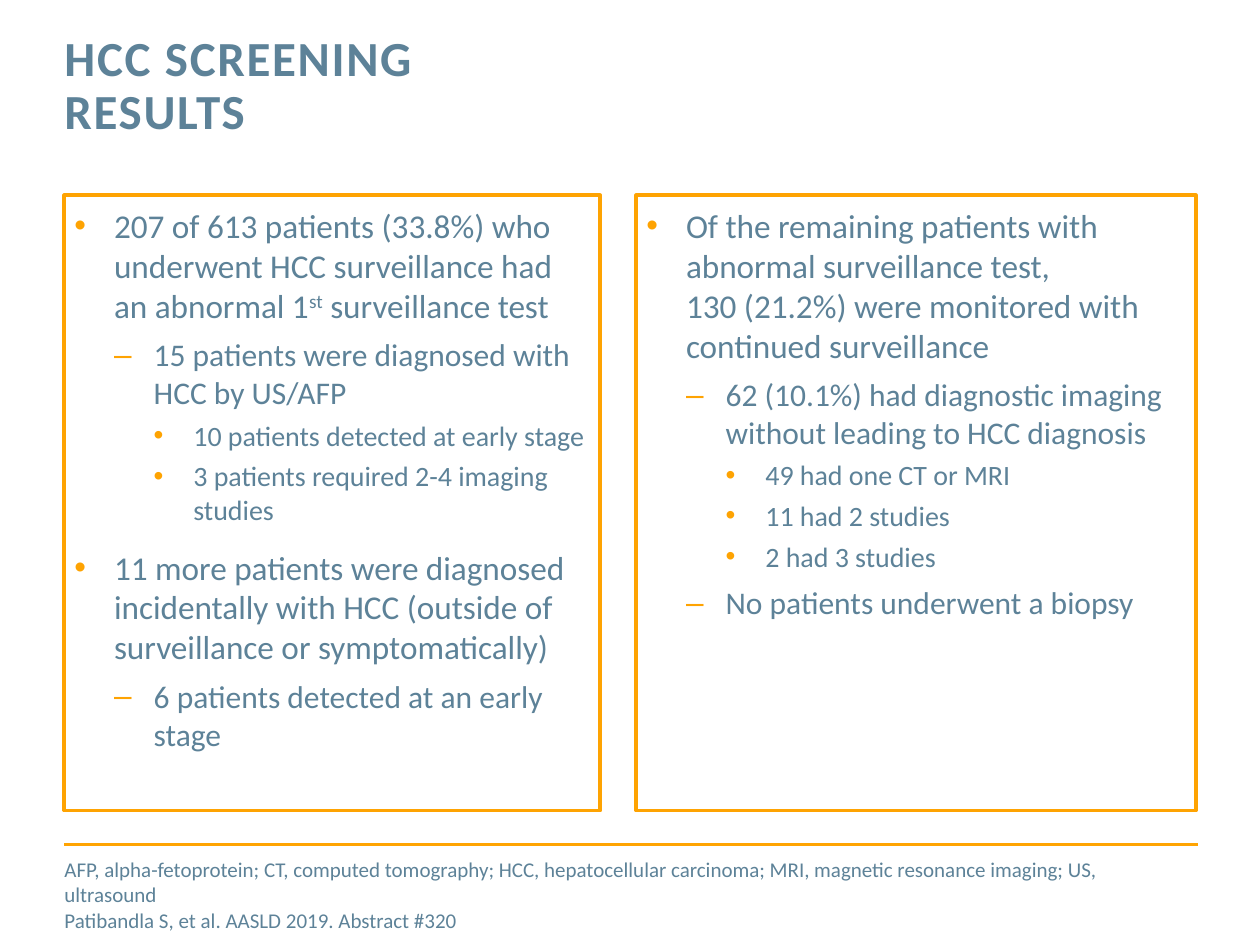
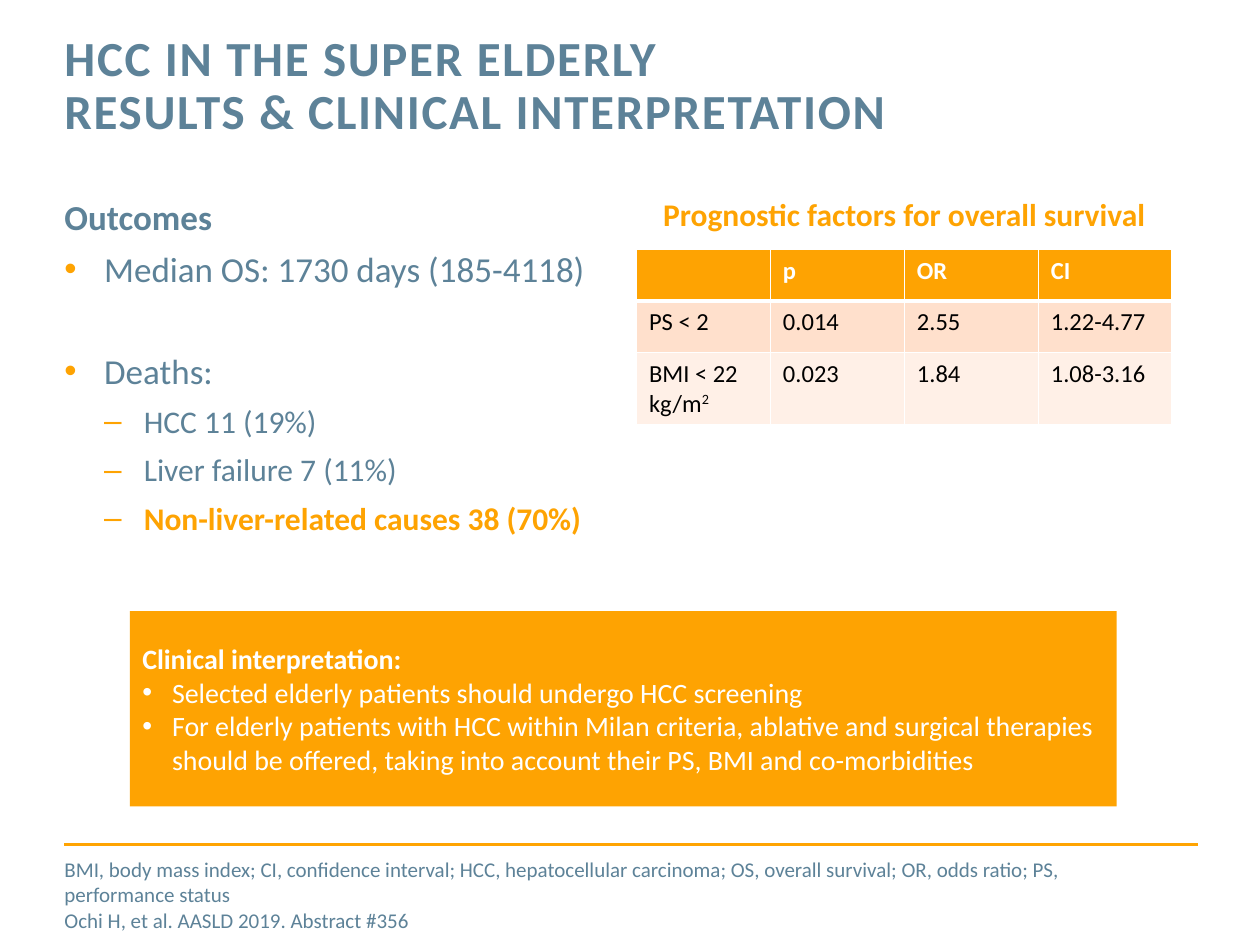
from lxml import etree
from pptx import Presentation
from pptx.dml.color import RGBColor
from pptx.enum.shapes import MSO_CONNECTOR, MSO_SHAPE
from pptx.enum.text import MSO_ANCHOR, MSO_AUTO_SIZE, PP_ALIGN
from pptx.oxml.ns import qn
from pptx.util import Cm, Pt

ORANGE = RGBColor(0xFE, 0xA3, 0x02)
RULE_ORANGE = RGBColor(0xFF, 0xA4, 0x02)
SLATE = RGBColor(0x5D, 0x82, 0x98)
PEACH = RGBColor(0xFF, 0xE0, 0xCC)
PALE_PEACH = RGBColor(0xFF, 0xF0, 0xE7)
WHITE = RGBColor(0xFF, 0xFF, 0xFF)
BLACK = RGBColor(0, 0, 0)

STRAIGHT = MSO_CONNECTOR.STRAIGHT
RECT = MSO_SHAPE.RECTANGLE
TOP, MIDDLE = MSO_ANCHOR.TOP, MSO_ANCHOR.MIDDLE
NO_FIT = MSO_AUTO_SIZE.NONE
LEFT, CENTER = PP_ALIGN.LEFT, PP_ALIGN.CENTER

FONT = "Calibri"
MARGIN, RIGHT_EDGE = 1.3, 24.16
RIGHT_COLUMN = 12.83
BODY_TOP, COLUMN_W, BODY_H = 3.94, 10.8, 12.4
RULE_Y = 17.02
INDENT = 0.8
BULLETS = "•–•"
SIZES = (19, 18, 16)
SPACES = (12, 6, 4)


def write(p, text, size=18, color=SLATE, bold=False, align=LEFT, before=0,
          line=None, spacing=0):
    """Fill a paragraph; ^..^ marks superscript and a newline a line break."""
    p.alignment = align
    p.space_before = Pt(before)
    if line:
        p.line_spacing = Pt(line)
    for i, part in enumerate(text.split("^")):
        for j, piece in enumerate(part.split("\n")):
            if j:
                p.add_line_break()
            if not piece:
                continue
            r = p.add_run()
            r.text = piece
            r.font.name, r.font.size, r.font.bold = FONT, Pt(size), bold
            r.font.color.rgb = color
            rPr = r._r.get_or_add_rPr()
            if spacing:
                rPr.set("spc", str(spacing * 100))
            if i % 2:
                rPr.set("baseline", "30000")


def add_bullet(p, char, color, indent, level=0):
    pPr = p._p.get_or_add_pPr()
    pPr.set("marL", str(Cm(indent * (level + 1))))
    pPr.set("indent", str(-Cm(indent)))
    if level:
        pPr.set("lvl", str(level))
    buClr = etree.SubElement(pPr, qn("a:buClr"))
    etree.SubElement(buClr, qn("a:srgbClr"), val=str(color))
    etree.SubElement(pPr, qn("a:buFont"), typeface="Arial")
    etree.SubElement(pPr, qn("a:buChar"), char=char)


def set_border(cell, side, width):
    ln = etree.SubElement(cell._tc.get_or_add_tcPr(), qn("a:ln" + side),
                          w=str(Pt(width)))
    fill = etree.SubElement(ln, qn("a:solidFill"))
    etree.SubElement(fill, qn("a:srgbClr"), val=str(WHITE))


class Deck:
    def __init__(self):
        self.prs = Presentation()
        self.prs.slide_width, self.prs.slide_height = Cm(25.4), Cm(19.05)
        self.s = None

    def add_slide(self, title, footnote):
        self.s = self.prs.slides.add_slide(self.prs.slide_layouts[5])
        sp = self.s.shapes.title
        sp.left, sp.top = Cm(MARGIN), Cm(0.69)
        sp.width, sp.height = Cm(18.21), Cm(2.24)
        tf = self.frame(sp)
        write(tf.paragraphs[0], title, size=28, bold=True, line=30, spacing=1)
        self.rule()
        self.text(footnote, MARGIN, 17.27, 21.21, 1.55, size=12)

    def frame(self, sp, inset=0, anchor=TOP):
        tf = sp.text_frame
        tf.word_wrap, tf.auto_size = True, NO_FIT
        tf.vertical_anchor = anchor
        tf.margin_left = tf.margin_right = Cm(inset)
        tf.margin_top = tf.margin_bottom = Cm(inset)
        return tf

    def rule(self):
        line = self.s.shapes.add_connector(
            STRAIGHT, Cm(MARGIN), Cm(RULE_Y), Cm(RIGHT_EDGE), Cm(RULE_Y))
        line.line.color.rgb, line.line.width = RULE_ORANGE, Pt(2)
        etree.SubElement(line._element.spPr, qn("a:effectLst"))

    def text(self, text, x, y, w, h, **fmt):
        sp = self.s.shapes.add_textbox(Cm(x), Cm(y), Cm(w), Cm(h))
        write(self.frame(sp).paragraphs[0], text, **fmt)
        return sp

    def box(self, x, y, w, h, fill=None, line=None):
        sp = self.s.shapes.add_shape(RECT, Cm(x), Cm(y), Cm(w), Cm(h))
        sp.shadow.inherit = False
        if fill is None:
            sp.fill.background()
        else:
            sp.fill.solid()
            sp.fill.fore_color.rgb = fill
        if line is None:
            sp.line.fill.background()
        else:
            sp.line.color.rgb, sp.line.width = line, Pt(2.25)
        return sp

    def bullet_panel(self, x, w, items):
        """Framed list; each item is a level and its text."""
        tf = self.frame(self.box(x, BODY_TOP, w, BODY_H, line=ORANGE), 0.2)
        for i, (level, text) in enumerate(items):
            p = tf.add_paragraph() if i else tf.paragraphs[0]
            add_bullet(p, BULLETS[level], ORANGE, INDENT, level)
            write(p, text, size=SIZES[level], before=SPACES[level] if i else 0)

    def headed_list(self, heading, items):
        """Unframed list; each item is a level, its text and its format."""
        sp = self.text(heading, MARGIN, BODY_TOP, COLUMN_W, BODY_H,
                       size=20, bold=True)
        for level, text, fmt in items:
            p = sp.text_frame.add_paragraph()
            add_bullet(p, BULLETS[level], ORANGE, INDENT, level)
            write(p, text, **{"size": 18 if level else 20, "before": 6, **fmt})

    def callout(self, heading, points):
        sp = self.box(2.62, 12.32, 19.89, 3.94, fill=ORANGE)
        tf = self.frame(sp, 0.25, MIDDLE)
        write(tf.paragraphs[0], heading, size=16, color=WHITE, bold=True)
        for point in points:
            p = tf.add_paragraph()
            add_bullet(p, "•", WHITE, 0.6)
            write(p, point, size=16, color=WHITE)

    def table(self, x, y, w, row_h, rows):
        fills = (ORANGE, PEACH, PALE_PEACH)
        n = len(rows[0])
        table = self.s.shapes.add_table(len(rows), n, Cm(x), Cm(y), Cm(w),
                                        Cm(row_h * len(rows))).table
        for i, row in enumerate(rows):
            header = i == 0
            for j, text in enumerate(row):
                cell = table.cell(i, j)
                for side in "LRTB":
                    thick = (header and side == "B") or (i == 1 and side == "T")
                    set_border(cell, side, 3 if thick else 1)
                cell.fill.solid()
                cell.fill.fore_color.rgb = fills[i]
                write(cell.text_frame.paragraphs[0], text, size=14,
                      color=WHITE if header else BLACK, bold=header)


def screening_results(deck):
    deck.add_slide(
        "HCC SCREENING\nRESULTS",
        "AFP, alpha-fetoprotein; CT, computed tomography; HCC, hepatocellular "
        "carcinoma; MRI, magnetic resonance imaging; US, ultrasound\n"
        "Patibandla S, et al. AASLD 2019. Abstract #320")
    deck.bullet_panel(MARGIN, COLUMN_W, [
        (0, "207 of 613 patients (33.8%) who underwent HCC surveillance had "
            "an abnormal 1^st^ surveillance test"),
        (1, "15 patients were diagnosed with HCC by US/AFP"),
        (2, "10 patients detected at early stage"),
        (2, "3 patients required 2-4 imaging studies"),
        (0, "11 more patients were diagnosed incidentally with HCC (outside "
            "of surveillance or symptomatically)"),
        (1, "6 patients detected at an early stage"),
    ])
    deck.bullet_panel(RIGHT_COLUMN, 11.28, [
        (0, "Of the remaining patients with abnormal surveillance test, \n"
            "130 (21.2%) were monitored with continued surveillance"),
        (1, "62 (10.1%) had diagnostic imaging without leading to HCC "
            "diagnosis"),
        (2, "49 had one CT or MRI"),
        (2, "11 had 2 studies"),
        (2, "2 had 3 studies"),
        (1, "No patients underwent a biopsy"),
    ])


def super_elderly(deck):
    deck.add_slide(
        "HCC IN THE SUPER ELDERLY\nRESULTS & CLINICAL INTERPRETATION",
        "BMI, body mass index; CI, confidence interval; HCC, hepatocellular "
        "carcinoma; OS, overall survival; OR, odds ratio; PS, performance "
        "status\nOchi H, et al. AASLD 2019. Abstract #356")
    deck.headed_list("Outcomes", [
        (0, "Median OS: 1730 days (185-4118)", {}),
        (0, "Deaths:", {"before": 34}),
        (1, "HCC 11 (19%)", {}),
        (1, "Liver failure 7 (11%)", {}),
        (1, "Non-liver-related causes 38 (70%)",
         {"color": ORANGE, "bold": True}),
    ])
    deck.callout("Clinical interpretation:", [
        "Selected elderly patients should undergo HCC screening",
        "For elderly patients with HCC within Milan criteria, ablative and "
        "surgical therapies should be offered, taking into account their PS, "
        "BMI and co-morbidities",
    ])
    deck.table(RIGHT_COLUMN, 5.03, COLUMN_W, 1.04, [
        ("", "p", "OR", "CI"),
        ("PS < 2", "0.014", "2.55", "1.22-4.77"),
        ("BMI < 22 kg/m^2^", "0.023", "1.84", "1.08-3.16"),
    ])
    deck.text("Prognostic factors for overall survival", RIGHT_COLUMN,
              BODY_TOP, COLUMN_W, 1.19, color=ORANGE, bold=True, align=CENTER)


def main():
    deck = Deck()
    screening_results(deck)
    super_elderly(deck)
    deck.prs.save("out.pptx")


if __name__ == "__main__":
    main()
